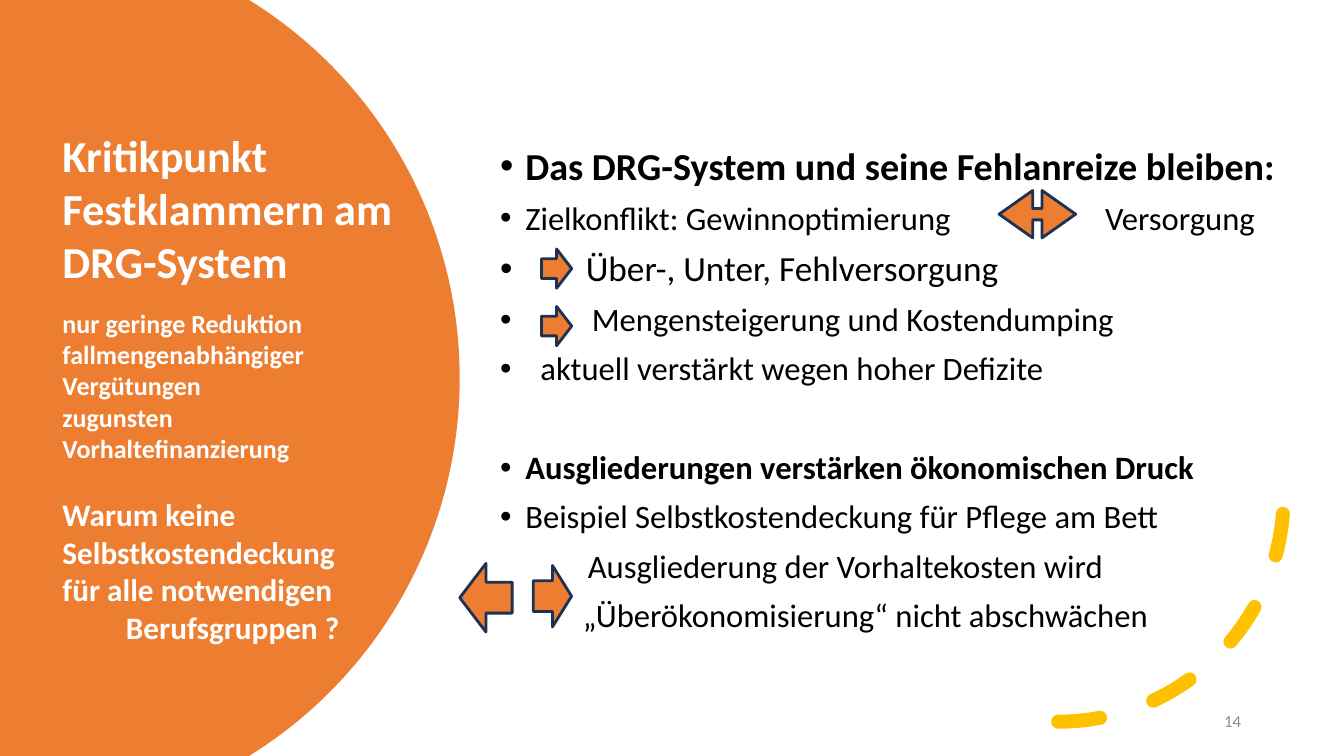
import math
from dataclasses import dataclass

import lxml.etree
import pptx
import pptx.dml.color
import pptx.enum.dml
import pptx.enum.shapes
import pptx.enum.text
import pptx.oxml.ns
import pptx.util

SHAPE = pptx.enum.shapes.MSO_SHAPE
ALIGN = pptx.enum.text.PP_ALIGN
WIDTH, HEIGHT = pptx.util.Inches(13.33), pptx.util.Inches(7.5)
TAB_WIDTH = pptx.util.Inches(1)
ORANGE, NAVY, YELLOW = "ED7D31", "1D3155", "FFC000"
WHITE, BLACK, GREY = "FFFFFF", "000000", "8B8B8B"


@dataclass(frozen=True)
class Area:
    """Left, top, width and height in percent of the slide."""
    left: float
    top: float
    width: float
    height: float

    def box(self) -> list[int]:
        shares = (self.left, self.top, self.width, self.height)
        return [round(share * side / 100)
                for share, side in zip(shares, (WIDTH, HEIGHT) * 2)]


@dataclass(frozen=True)
class Line:
    text: str
    size: float
    bold: bool = False
    color: str = BLACK
    before: float = 0
    spacing: float = 0.9
    margin: float = 0  # inches
    bullet: bool = False
    align: ALIGN = ALIGN.LEFT


@dataclass(frozen=True)
class Arrow:
    kind: SHAPE
    area: Area
    adjustments: tuple[float, float] = (0.5, 0.5)


def rgb(color: str) -> pptx.dml.color.RGBColor:
    return pptx.dml.color.RGBColor.from_string(color)


def add_element(parent, tag: str, **attributes: str):
    return lxml.etree.SubElement(parent, pptx.oxml.ns.qn(tag), attributes)


def write(shape, lines: list[Line]) -> None:
    frame = shape.text_frame
    frame.word_wrap = True
    frame.auto_size = pptx.enum.text.MSO_AUTO_SIZE.NONE
    frame.vertical_anchor = pptx.enum.text.MSO_ANCHOR.MIDDLE
    for number, line in enumerate(lines):
        paragraph = frame.add_paragraph() if number else frame.paragraphs[0]
        paragraph.text = line.text
        paragraph.alignment = line.align
        paragraph.line_spacing = line.spacing
        paragraph.space_before = pptx.util.Pt(line.before)
        paragraph.space_after = pptx.util.Pt(0)
        properties = paragraph._p.get_or_add_pPr()
        margin = pptx.util.Inches(line.margin)
        properties.set("marL", str(margin))
        properties.set("indent", str(-margin if line.bullet else 0))
        properties.set("defTabSz", str(TAB_WIDTH))
        if line.bullet:
            add_element(add_element(properties, "a:buClr"), "a:srgbClr", val=line.color)
            add_element(properties, "a:buFont", typeface="Arial")
            add_element(properties, "a:buChar", char="•")
        else:
            add_element(properties, "a:buNone")
        font = paragraph.font
        font.name, font.size, font.bold = "Calibri", pptx.util.Pt(line.size), line.bold
        font.color.rgb = rgb(line.color)


def place(shape, area: Area) -> None:
    shape.left, shape.top, shape.width, shape.height = area.box()


def add_disc(slide) -> None:
    """Disc cut off by the left, top and bottom edges, behind the title."""
    radius, center_x = pptx.util.Inches(4.41), pptx.util.Inches(0.15)
    center_y = HEIGHT / 2
    half_angle = math.asin(center_y / radius)
    steps = 90
    angles = [half_angle * (2 * step / steps - 1) for step in range(steps + 1)]
    rim = [(round(center_x + radius * math.cos(angle)),
            round(center_y + radius * math.sin(angle))) for angle in angles]
    builder = slide.shapes.build_freeform(0, 0)
    builder.add_line_segments(rim + [(0, HEIGHT)], close=True)
    disc = builder.convert_to_shape()
    disc.shadow.inherit = False
    disc.fill.solid()
    disc.fill.fore_color.rgb = rgb(ORANGE)
    disc.line.fill.background()
    slide.shapes._spTree.insert(2, disc._element)


def add_dashed_arc(slide, area: Area) -> None:
    arc = slide.shapes.add_shape(SHAPE.ARC, *area.box())
    arc.shadow.inherit = False
    arc.adjustments[0], arc.adjustments[1] = 162, 0
    arc._element.spPr.xfrm.set("flipV", "1")
    arc.fill.background()
    arc.line.color.rgb = rgb(YELLOW)
    arc.line.width = pptx.util.Pt(10)
    arc.line.dash_style = pptx.enum.dml.MSO_LINE.DASH
    arc.line._get_or_add_ln().set("cap", "rnd")


def add_arrow(slide, arrow: Arrow) -> None:
    shape = slide.shapes.add_shape(arrow.kind, *arrow.area.box())
    shape.shadow.inherit = False
    for number, value in enumerate(arrow.adjustments):
        shape.adjustments[number] = value
    shape.fill.solid()
    shape.fill.fore_color.rgb = rgb(ORANGE)
    shape.line.color.rgb = rgb(NAVY)
    shape.line.width = pptx.util.Pt(2)


def title_line(text: str, size: float, before: float = 0, margin: float = 0) -> Line:
    return Line(text, size, True, WHITE, before, 1.0, margin)


def point(text: str, size: float = 23.3, bold: bool = False, before: float = 10,
          margin: float = 0.25, bullet: bool = True, spacing: float = 0.9) -> Line:
    return Line(text, size, bold, BLACK, before, spacing, margin, bullet)


CRITICISM = [
    title_line("Kritikpunkt Festklammern am DRG-System", 31.6),
    title_line("nur geringe Reduktion fallmengenabhängiger Vergütungen", 18.6, 14.5),
    title_line("zugunsten", 18.6),
    title_line("Vorhaltefinanzierung", 18.6),
    title_line("Warum keine Selbstkostendeckung", 22.3, 22.8),
    title_line("für alle notwendigen", 22.3),
    title_line("Berufsgruppen ?", 22.3, margin=0.63),
]
INCENTIVES = [
    point("Das DRG-System und seine Fehlanreize bleiben:", 27.2, True, 0, spacing=2.0),
    point("Zielkonflikt: Gewinnoptimierung\t\tVersorgung"),
    point("Über-, Unter, Fehlversorgung", 25.2, margin=0.85),
    point("Mengensteigerung und Kostendumping", margin=0.91),
    point("aktuell verstärkt wegen hoher Defizite", margin=0.4),
    point("Ausgliederungen verstärken ökonomischen Druck", bold=True, before=45.6),
    point("Beispiel Selbstkostendeckung für Pflege am Bett"),
    point("Ausgliederung der Vorhaltekosten wird", margin=0.87, bullet=False),
    point("„Überökonomisierung“ nicht abschwächen", margin=0.82, bullet=False),
]
ARROWS = [
    Arrow(SHAPE.LEFT_RIGHT_ARROW, Area(74.34, 25.2, 5.7, 6.27), (0.24, 0.71)),
    Arrow(SHAPE.RIGHT_ARROW, Area(39.68, 74.8, 2.85, 8.13)),
    *(Arrow(SHAPE.RIGHT_ARROW, Area(40.29, top, 2.25, 5.2)) for top in (32.93, 40.53)),
    Arrow(SHAPE.LEFT_ARROW, Area(34.21, 74.53, 3.9, 9.07), (0.45, 0.5)),
]


def main() -> None:
    deck = pptx.Presentation()
    deck.slide_width, deck.slide_height = WIDTH, HEIGHT
    slide = deck.slides.add_slide(deck.slide_layouts[1])

    # Orange disc with the criticism
    add_disc(slide)
    criticism = slide.shapes.title
    place(criticism, Area(3.9, 4.27, 26.26, 93.73))
    write(criticism, CRITICISM)

    # Dashed curve and the list of false incentives
    add_dashed_arc(slide, Area(61.97, 35.87, 33.53, 59.6))
    incentives = slide.placeholders[1]
    place(incentives, Area(36.46, 0.53, 63.54, 95.6))
    write(incentives, INCENTIVES)

    # Page number
    page_number = slide.shapes.add_textbox(*Area(78.24, 92.67, 14.85, 5.33).box())
    write(page_number, [Line("14", 12, color=GREY, spacing=1.0, align=ALIGN.RIGHT)])

    # Arrows beside the points
    for arrow in ARROWS:
        add_arrow(slide, arrow)

    deck.save("out.pptx")


if __name__ == "__main__":
    main()
